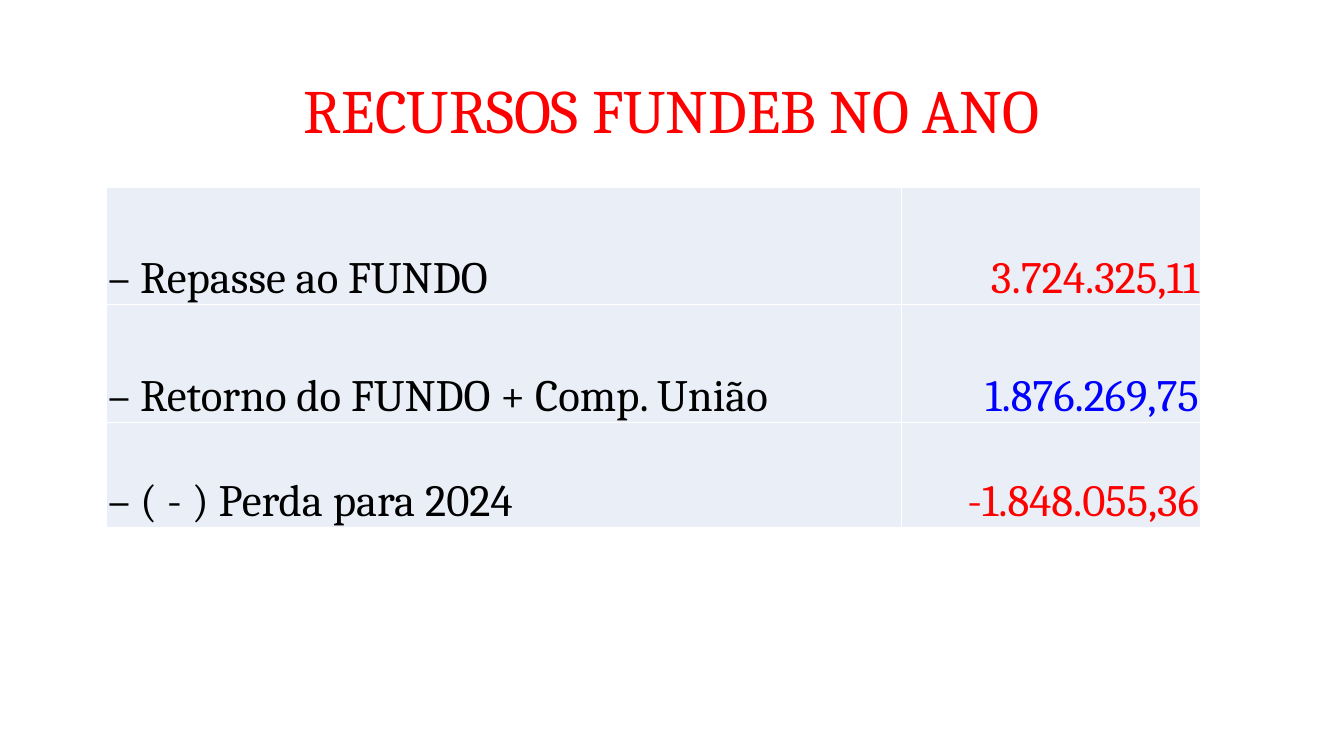
from lxml.etree import SubElement
from pptx import Presentation
from pptx.dml.color import RGBColor
from pptx.enum.text import MSO_ANCHOR, PP_ALIGN
from pptx.oxml.ns import qn
from pptx.util import Cm, Pt

RED, BLUE, BLACK, WHITE, PALE = "FF0000", "0000FF", "000000", "FFFFFF", "EAEFF7"

ROWS = [
    ("– Repasse ao FUNDO", "3.724.325,11", RED, 2.97),
    ("– Retorno do FUNDO + Comp. União", "1.876.269,75", BLUE, 2.97),
    ("– ( - ) Perda para 2024", "-1.848.055,36", RED, 2.64),
]


def color(value):
    return RGBColor.from_string(value)


class SlideBuilder:
    font = "Cambria"

    def __init__(self, page):
        self.page = page

    def add_text(self, para, text, size, ink, align):
        para.alignment = align
        span = para.add_run()
        span.text = text
        span.font.name = self.font
        span.font.size = Pt(size)
        span.font.color.rgb = color(ink)

    def title(self, text, left, top, width, height):
        box = self.page.shapes.add_textbox(Cm(left), Cm(top), Cm(width), Cm(height))
        frame = box.text_frame
        frame.word_wrap = True
        frame.vertical_anchor = MSO_ANCHOR.MIDDLE
        para = frame.paragraphs[0]
        para.line_spacing = 0.9
        self.add_text(para, text, 44, RED, PP_ALIGN.CENTER)

    def cell(self, cell, text, ink, align):
        cell.margin_left = cell.margin_right = cell.margin_top = Cm(0.03)
        cell.margin_bottom = Cm(0)
        cell.vertical_anchor = MSO_ANCHOR.BOTTOM
        properties = cell._tc.get_or_add_tcPr()
        for side in ("lnL", "lnR", "lnT", "lnB"):
            border = SubElement(properties, qn(f"a:{side}"), w=str(Pt(1)))
            fill = SubElement(border, qn("a:solidFill"))
            SubElement(fill, qn("a:srgbClr"), val=WHITE)
        cell.fill.solid()
        cell.fill.fore_color.rgb = color(PALE)
        self.add_text(cell.text_frame.paragraphs[0], text, 32, ink, align)

    def table(self, rows, left, top, widths):
        height = sum(row[-1] for row in rows)
        frame = self.page.shapes.add_table(
            len(rows), len(widths), Cm(left), Cm(top), Cm(sum(widths)), Cm(height))
        table = frame.table
        table.first_row = False
        table.horz_banding = False
        for column, width in zip(table.columns, widths):
            column.width = Cm(width)
        for row, (label, amount, ink, row_height) in zip(table.rows, rows):
            row.height = Cm(row_height)
            self.cell(row.cells[0], label, BLACK, PP_ALIGN.LEFT)
            self.cell(row.cells[1], amount, ink, PP_ALIGN.RIGHT)


def main():
    deck = Presentation()
    deck.slide_width, deck.slide_height = Cm(33.87), Cm(19.05)
    builder = SlideBuilder(deck.slides.add_slide(deck.slide_layouts[6]))
    builder.title("RECURSOS FUNDEB NO ANO", 2.33, 1.02, 29.21, 3.68)
    builder.table(ROWS, 2.69, 4.71, (20.02, 7.54))
    deck.save("out.pptx")


if __name__ == "__main__":
    main()
